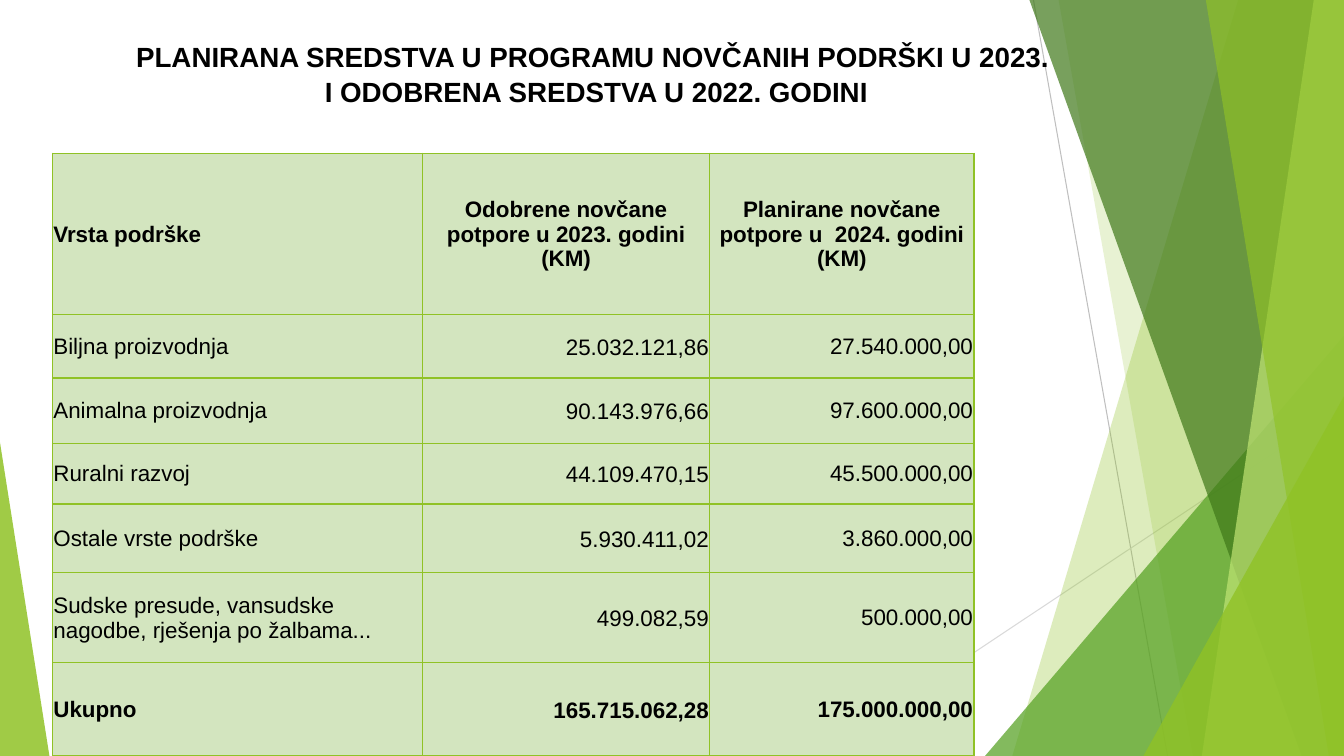
import pptx
import pptx.util
import pptx.dml.color
import pptx.enum.shapes
import pptx.enum.text
import pptx.oxml
import pptx.oxml.ns
import lxml.etree

Inches, Pt = pptx.util.Inches, pptx.util.Pt
ALIGN = pptx.enum.text.PP_ALIGN
FONT, GREEN, CELL_FILL = "Arial", "90C226", "D3E5BF"

TITLE = ["PLANIRANA SREDSTVA U PROGRAMU NOVČANIH PODRŠKI U 2023.",
         " I ODOBRENA SREDSTVA U 2022. GODINI"]
ROWS = [
    ("Vrsta podrške", "Odobrene novčane potpore u 2023. godini (KM)",
     "Planirane novčane potpore u  2024. godini (KM)"),
    ("Biljna proizvodnja", "25.032.121,86", "27.540.000,00"),
    ("Animalna proizvodnja", "90.143.976,66", "97.600.000,00"),
    ("Ruralni razvoj", "44.109.470,15", "45.500.000,00"),
    ("Ostale vrste podrške", "5.930.411,02", "3.860.000,00"),
    ("Sudske presude, vansudske nagodbe, rješenja po žalbama...", "499.082,59", "500.000,00"),
    ("Ukupno", "165.715.062,28", "175.000.000,00"),
]
COL_WIDTHS = [3.67, 2.85, 2.62]
ROW_HEIGHTS = [1.6, 0.63, 0.65, 0.6, 0.68, 0.89, 0.93]

RAYS = [((10.25, 0), (11.58, 7.5), "BFBFBF"), ((13.33, 4.03), (8.12, 7.5), "D9D9D9")]
# Bands run from the top edge to the bottom edge and end at the right side:
# ("band", top x, bottom x, colour, opacity %)
# ("triangle", left, top, width, apex position, colour, opacity %), down to the bottom edge
FACETS = [
    ("band", 12.28, 10.04, GREEN, 30),
    ("band", 10.5, 11.83, GREEN, 20),
    ("triangle", 9.77, 3.33, 3.56, 1, "54A021", 72),
    ("band", 10.21, 12.91, "3F7819", 70),
    ("band", 13.03, 11.92, "C0E474", 70),
    ("band", 11.96, 13.18, GREEN, 65),
    ("triangle", 11.34, 3.93, 1.99, 1, GREEN, 80),
    ("triangle", 0, 4.39, 0.49, 0, GREEN, 85),
]
WIDTH, HEIGHT = 13.33, 7.5


def rgb(value):
    return pptx.dml.color.RGBColor.from_string(value)


def add_run(p, text, size, bold):
    r = p.add_run()
    r.text = text
    r.font.name, r.font.size, r.font.bold = FONT, Pt(size), bold
    r.font.color.rgb = rgb("000000")


def add_ray(s, start, end, color):
    line = s.shapes.add_connector(pptx.enum.shapes.MSO_CONNECTOR.STRAIGHT,
                                  *[Inches(v) for v in start + end])
    line.line.color.rgb = rgb(color)
    line.line.width = Pt(0.75)
    lxml.etree.SubElement(line._element.spPr, pptx.oxml.ns.qn("a:effectLst"))


def add_facet(s, kind, *values):
    *place, color, opacity = values
    if kind == "band":
        top_x, bottom_x = place
        outline = s.shapes.build_freeform(Inches(top_x), 0)
        outline.add_line_segments([(Inches(x), Inches(y)) for x, y in
                                   ((WIDTH, 0), (WIDTH, HEIGHT), (bottom_x, HEIGHT))])
        sp = outline.convert_to_shape()
    else:
        left, top, width, apex = place
        sp = s.shapes.add_shape(pptx.enum.shapes.MSO_SHAPE.ISOSCELES_TRIANGLE, Inches(left),
                                Inches(top), Inches(width), Inches(HEIGHT - top))
        sp.adjustments[0] = apex
    sp.shadow.inherit = False
    sp.line.fill.background()
    sp.fill.solid()
    sp.fill.fore_color.rgb = rgb(color)
    clr = sp._element.spPr.find(".//" + pptx.oxml.ns.qn("a:srgbClr"))
    lxml.etree.SubElement(clr, pptx.oxml.ns.qn("a:alpha"), val=str(opacity * 1000))


def add_borders(cell):
    """Draw a green line on all four sides; borders stand before the fill."""
    for i, side in enumerate(("lnL", "lnR", "lnT", "lnB")):
        cell._tc.get_or_add_tcPr().insert(i, pptx.oxml.parse_xml(
            f'<a:{side} {pptx.oxml.ns.nsdecls("a")} w="12700"><a:solidFill>'
            f'<a:srgbClr val="{GREEN}"/></a:solidFill></a:{side}>'))


def add_title(s):
    tf = s.shapes.add_textbox(Inches(0.29), Inches(0.32), Inches(11.17), Inches(1.2)).text_frame
    tf.word_wrap = True
    p = tf.paragraphs[0]
    p.alignment, p.line_spacing = ALIGN.CENTER, 1.07
    for i, text in enumerate(TITLE):
        if i:
            p.add_line_break()
        add_run(p, text, 19.8, True)


def add_support_table(s):
    table = s.shapes.add_table(len(ROWS), len(COL_WIDTHS), Inches(0.52), Inches(1.52),
                               Inches(sum(COL_WIDTHS)), Inches(sum(ROW_HEIGHTS))).table
    for column, width in zip(table.columns, COL_WIDTHS):
        column.width = Inches(width)
    for i, (texts, height) in enumerate(zip(ROWS, ROW_HEIGHTS)):
        table.rows[i].height = Inches(height)
        for j, text in enumerate(texts):
            cell = table.cell(i, j)
            cell.fill.solid()
            cell.fill.fore_color.rgb = rgb(CELL_FILL)
            add_borders(cell)
            cell.vertical_anchor = pptx.enum.text.MSO_ANCHOR.MIDDLE
            cell.margin_left = cell.margin_right = cell.margin_top = Inches(0.01)
            cell.margin_bottom = 0
            p = cell.text_frame.paragraphs[0]
            if j == 0:
                p.alignment = ALIGN.LEFT
            else:
                p.alignment = ALIGN.RIGHT if i else ALIGN.CENTER
            if i and j == 1:
                p.line_spacing, p.space_after = 1.07, Pt(8)
            add_run(p, text, 16, i in (0, len(ROWS) - 1))


def main():
    prs = pptx.Presentation()
    prs.slide_width, prs.slide_height = Inches(WIDTH), Inches(HEIGHT)
    s = prs.slides.add_slide(prs.slide_layouts[6])
    for ray in RAYS:
        add_ray(s, *ray)
    for facet in FACETS:
        add_facet(s, *facet)
    add_title(s)
    add_support_table(s)
    prs.save("out.pptx")


if __name__ == "__main__":
    main()
